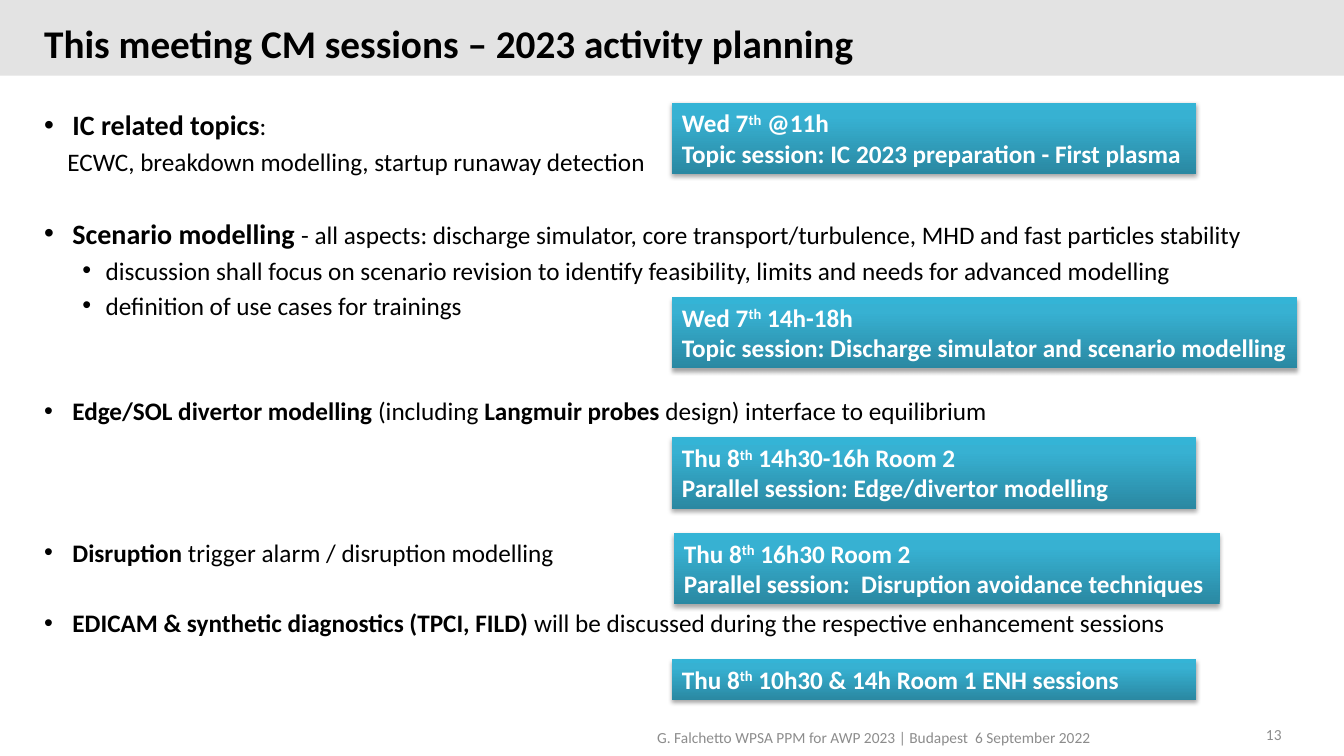
from copy import deepcopy

from lxml.etree import SubElement
from pptx import Presentation
from pptx.dml.color import RGBColor
from pptx.enum.shapes import MSO_SHAPE
from pptx.enum.text import MSO_ANCHOR, MSO_AUTO_SIZE, PP_ALIGN
from pptx.oxml.ns import qn
from pptx.util import Inches, Pt

COLORS = {
    "band": "E3E3E3", "text": "000000", "muted": "8C8C8C", "white": "FFFFFF",
    "deep": "2A88A2", "mid": "37B1D2", "light": "34B4D6",
}
SESSION_GRADIENT = [(0, "deep"), (0.8, "mid"), (1, "light")]
FONT = "Calibri"
BODY_SIZE = 18
LINE_GAP = 3.4
LINE_PITCH = 25.3
# style: left margin and first-line indent in inches, bullet
STYLES = {
    "topic": (0.28, -0.28, "•"),
    "detail": (0.61, -0.23, "•"),
    "plain": (0.23, 0, None),
}

# style, skipped lines before, runs as (text, size, bold)
TOPICS = [
    ("topic", 0, [("IC related topics", 20, True), (":", 18, False)]),
    ("plain", 0, [("ECWC, breakdown modelling, startup runaway detection", 18, False)]),
    ("topic", 1, [("Scenario modelling ", 20, True),
                  ("- all aspects: discharge simulator, core transport/turbulence, "
                   "MHD and fast particles stability", 18, False)]),
    ("detail", 0, [("discussion shall focus on scenario revision to identify feasibility, "
                    "limits and needs for advanced modelling", 18, False)]),
    ("detail", 0, [("definition of use cases for trainings", 18, False)]),
    ("topic", 2, [("Edge/SOL divertor modelling ", 18, True), ("(including ", 18, False),
                  ("Langmuir probes ", 18, True),
                  ("design) interface to equilibrium", 18, False)]),
    ("topic", 3, [("Disruption", 18, True),
                  (" trigger alarm / disruption modelling", 18, False)]),
    ("topic", 1, [("EDICAM & synthetic diagnostics (TPCI, FILD) ", 18, True),
                  ("will be discussed during the respective enhancement sessions", 18, False)]),
]

# column, row, columns wide, day, time, session name
SESSIONS = [
    (50, 13.6, 39, "Wed 7", " @11h", "Topic session: IC 2023 preparation - First plasma"),
    (50, 39.33, 46.5, "Wed 7", " 14h-18h",
     "Topic session: Discharge simulator and scenario modelling"),
    (50, 57.87, 39, "Thu 8", " 14h30-16h Room 2", "Parallel session: Edge/divertor modelling"),
    (50.15, 70.53, 40.6, "Thu 8", " 16h30 Room 2",
     "Parallel session:  Disruption avoidance techniques"),
    (50, 87.2, 39, "Thu 8", " 10h30 & 14h Room 1 ENH sessions", None),
]


class Deck:
    """Places elements on a grid of 100 columns by 100 rows."""

    def __init__(self):
        self.prs = Presentation()
        self.prs.slide_width, self.prs.slide_height = Inches(13.33), Inches(7.5)
        self.slide = self.prs.slides.add_slide(self.prs.slide_layouts[6])

    def frame(self, col, row, cols, rows):
        w, h = self.prs.slide_width / 100, self.prs.slide_height / 100
        return [int(v) for v in (col * w, row * h, cols * w, rows * h)]

    def rectangle(self, *grid):
        sp = self.slide.shapes.add_shape(MSO_SHAPE.RECTANGLE, *self.frame(*grid))
        sp.shadow.inherit = False
        sp.line.fill.background()
        return sp

    def band(self, *grid):
        fill = self.rectangle(*grid).fill
        fill.solid()
        fill.fore_color.rgb = RGBColor.from_string(COLORS["band"])

    def text_box(self, *grid):
        tf = self.slide.shapes.add_textbox(*self.frame(*grid)).text_frame
        tf.word_wrap = True
        return tf

    def run(self, p, text, size=BODY_SIZE, bold=False, color="text"):
        r = p.add_run()
        r.text = text
        r.font.name, r.font.size, r.font.bold = FONT, Pt(size), bold
        r.font.color.rgb = RGBColor.from_string(COLORS[color])
        return r

    def label(self, text, grid, size, bold=False, color="text", align=PP_ALIGN.LEFT):
        tf = self.text_box(*grid)
        p = tf.paragraphs[0]
        p.alignment = align
        self.run(p, text, size, bold, color)
        return tf

    def title(self, text, *grid):
        tf = self.label(text, grid, 28, bold=True)
        tf.vertical_anchor = MSO_ANCHOR.MIDDLE
        tf.paragraphs[0].line_spacing = Pt(24)

    def topics(self, items, *grid):
        tf = self.text_box(*grid)
        for i, (style, skipped, runs) in enumerate(items):
            p = tf.add_paragraph() if i else tf.paragraphs[0]
            margin, indent, bullet = STYLES[style]
            pPr = p._p.get_or_add_pPr()
            pPr.set("marL", str(Inches(margin)))
            pPr.set("indent", str(Inches(indent)))
            if bullet:
                SubElement(pPr, qn("a:buFont"), typeface="Arial")
                SubElement(pPr, qn("a:buChar"), char=bullet)
            if i:
                p.space_before = Pt(LINE_GAP + skipped * LINE_PITCH)
            for text, size, bold in runs:
                self.run(p, text, size, bold)

    def gradient(self, sp):
        sp.fill.gradient()
        sp.fill.gradient_angle = 90
        stop_list = sp._element.spPr.find(".//" + qn("a:gsLst"))
        stop_list.append(deepcopy(stop_list[-1]))
        for stop, (position, color) in zip(sp.fill.gradient_stops, SESSION_GRADIENT):
            stop.position = position
            stop.color.rgb = RGBColor.from_string(COLORS[color])

    def drop_shadow(self, sp):
        effects = sp._element.spPr.find(qn("a:effectLst"))
        shadow = SubElement(effects, qn("a:outerShdw"), blurRad=str(Pt(3.1)),
                            dist=str(Pt(1.8)), dir="5400000", rotWithShape="0")
        color = SubElement(shadow, qn("a:srgbClr"), val=COLORS["text"])
        SubElement(color, qn("a:alpha"), val="35000")

    def session(self, col, row, cols, day, time, name):
        sp = self.rectangle(col, row, cols, 9.4 if name else 5.4)
        self.gradient(sp)
        self.drop_shadow(sp)
        tf = sp.text_frame
        tf.word_wrap = True
        tf.auto_size = MSO_AUTO_SIZE.SHAPE_TO_FIT_TEXT
        tf.vertical_anchor = MSO_ANCHOR.TOP
        p = tf.paragraphs[0]
        p.alignment = PP_ALIGN.LEFT
        for text in (day, "th", time):
            r = self.run(p, text, bold=True, color="white")
            if text == "th":
                r._r.get_or_add_rPr().set("baseline", "30000")
        if name:
            p = tf.add_paragraph()
            p.alignment = PP_ALIGN.LEFT
            self.run(p, name, bold=True, color="white")


def main():
    deck = Deck()
    deck.band(0, 0, 100, 10)
    deck.title("This meeting CM sessions – 2023 activity planning", 2.55, 3.2, 82.5, 6.67)
    deck.topics(TOPICS, 2.55, 13.6, 97.45, 72)
    deck.label("G. Falchetto WPSA PPM for AWP 2023 | Budapest  6 September 2022",
               (48.16, 95.6, 42, 4.4), 11, color="muted")
    deck.label("13", (90.17, 95.2, 5.93, 2.93), 11, color="muted", align=PP_ALIGN.RIGHT)
    for session in SESSIONS:
        deck.session(*session)
    deck.prs.save("out.pptx")


if __name__ == "__main__":
    main()
